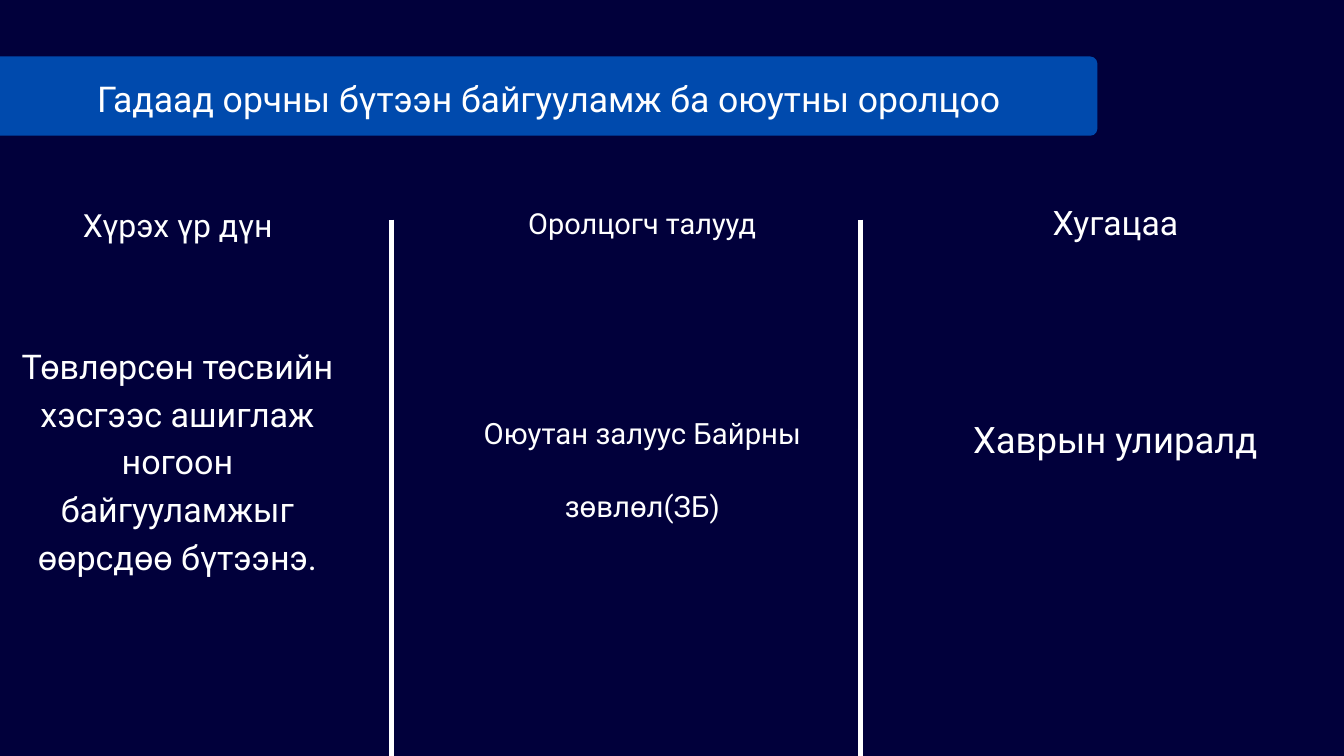
from lxml import etree
from pptx import Presentation
from pptx.dml.color import RGBColor
from pptx.enum.shapes import MSO_CONNECTOR, MSO_SHAPE
from pptx.enum.text import MSO_ANCHOR, PP_ALIGN
from pptx.oxml.ns import qn
from pptx.util import Inches, Pt

COLORS = {"background": "01003B", "banner": "004AAD", "white": "FFFFFF"}


def rgb(name):
    return RGBColor.from_string(COLORS[name])


def add_text(text, left, top, width, height, size, spacing=1.4):
    box = s.shapes.add_textbox(Inches(left), Inches(top), Inches(width), Inches(height))
    tf = box.text_frame
    frame_format = {
        "word_wrap": True, "vertical_anchor": MSO_ANCHOR.TOP,
        "margin_left": 0, "margin_right": 0, "margin_top": 0, "margin_bottom": 0,
    }
    for name, value in frame_format.items():
        setattr(tf, name, value)
    p = tf.paragraphs[0]
    p.alignment = PP_ALIGN.CENTER
    p.line_spacing = Pt(round(size * spacing, 1))
    r = p.add_run()
    r.text = text
    for name, value in {"name": "Roboto", "size": Pt(size)}.items():
        setattr(r.font, name, value)
    r.font.color.rgb = rgb("white")


prs = Presentation()
prs.slide_width, prs.slide_height = Inches(20), Inches(11.25)
s = prs.slides.add_slide(prs.slide_layouts[6])
s.background.fill.solid()
s.background.fill.fore_color.rgb = rgb("background")

# Column dividers, running past the bottom edge
for x in (5.83, 12.81):
    line = s.shapes.add_connector(
        MSO_CONNECTOR.STRAIGHT, Inches(x), Inches(3.27), Inches(x), Inches(14.52))
    line.line.color.rgb = rgb("white")
    line.line.width = Pt(5.25)
    etree.SubElement(line._element.spPr, qn("a:effectLst"))

# Title banner, bleeding off the left edge
sp = s.shapes.add_shape(
    MSO_SHAPE.ROUNDED_RECTANGLE, Inches(-0.71), Inches(0.84), Inches(17.04), Inches(1.18))
sp.adjustments[0] = 0.09
sp.shadow.inherit = False
sp.fill.solid()
sp.fill.fore_color.rgb = rgb("banner")
sp.line.fill.background()
add_text("Гадаад орчны бүтээн байгууламж ба оюутны оролцоо", 0, 1.04, 16.33, 0.72, 38.1)

# Column headings
headings = [
    ("Хүрэх үр дүн", 1.09, 2.97, 3.11, 0.63, 34.2),
    ("Оролцогч талууд", 7.26, 2.97, 4.59, 0.58, 31),
    ("Хугацаа", 14.94, 2.91, 3.32, 0.68, 36.1),
]
# Column contents
contents = [
    ("Төвлөрсөн төсвийн хэсгээс ашиглаж ногоон байгууламжыг өөрсдөө бүтээнэ.",
     0.28, 5.04, 4.72, 3.52, 36.5),
    ("Оюутан залуус Байрны зөвлөл(ЗБ)", 7.14, 5.61, 4.84, 2.03, 31.4, 2.5),
    ("Хаврын улиралд", 14.22, 6.1, 4.76, 0.73, 39.1),
]
for item in headings + contents:
    add_text(*item)

prs.save("out.pptx")
